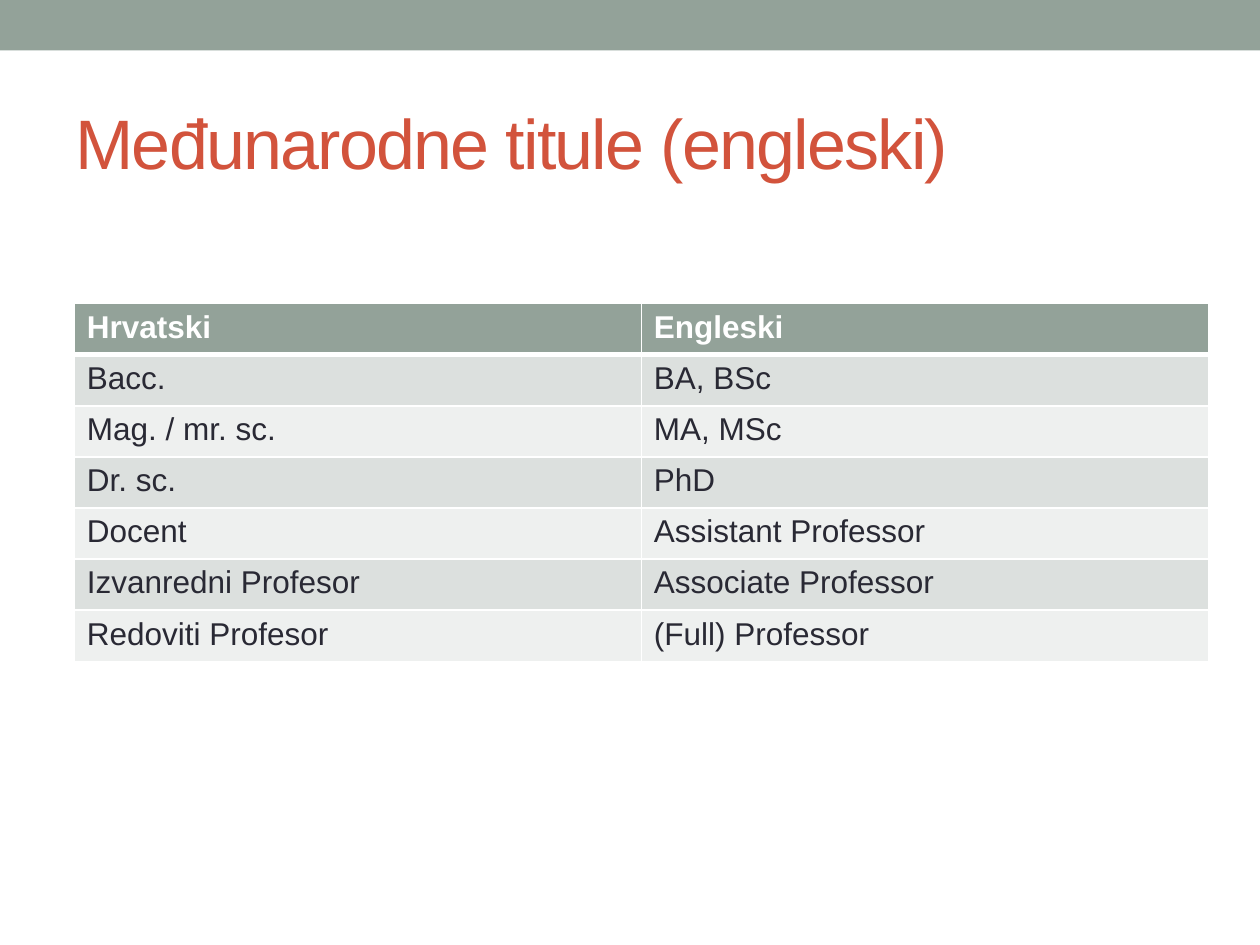
from lxml.etree import SubElement
from pptx import Presentation
from pptx.dml.color import RGBColor
from pptx.enum.shapes import MSO_SHAPE
from pptx.enum.text import MSO_ANCHOR
from pptx.oxml.ns import qn
from pptx.util import Inches, Pt

COLORS = {
    "sage": "93A299",
    "title": "D2533C",
    "text": "292934",
    "white": "FFFFFF",
    "dark_band": "DCE0DE",
    "light_band": "EEF0EF",
}
TITLE_FORMAT = {"name": "Arial", "size": Pt(40), "bold": False}
HEADER_FORMAT = {"name": "Arial", "size": Pt(18), "bold": True}
BODY_FORMAT = {"name": "Arial", "size": Pt(18), "bold": False}
TITLES = [
    ("Hrvatski", "Engleski"),
    ("Bacc.", "BA, BSc"),
    ("Mag. / mr. sc.", "MA, MSc"),
    ("Dr. sc.", "PhD"),
    ("Docent", "Assistant Professor"),
    ("Izvanredni Profesor", "Associate Professor"),
    ("Redoviti Profesor", "(Full) Professor"),
]


def paint(fill, color):
    fill.solid()
    fill.fore_color.rgb = RGBColor.from_string(COLORS[color])


def write(para, text, values, color):
    span = para.add_run()
    span.text = text
    for name, value in values.items():
        setattr(span.font, name, value)
    span.font.color.rgb = RGBColor.from_string(COLORS[color])
    return span


def add_band(page):
    band = page.shapes.add_shape(
        MSO_SHAPE.RECTANGLE, 0, 0, Inches(10), Inches(0.4))
    band.shadow.inherit = False
    paint(band.fill, "sage")
    band.line.fill.background()


def add_title(page, text):
    box = page.shapes.add_textbox(
        Inches(0.5), Inches(0.58), Inches(9), Inches(1.08))
    frame = box.text_frame
    frame.word_wrap = True
    frame.vertical_anchor = MSO_ANCHOR.MIDDLE
    span = write(frame.paragraphs[0], text, TITLE_FORMAT, "title")
    span.font._element.set("spc", "-100")


def add_borders(cell, widths):
    properties = cell._tc.get_or_add_tcPr()
    for side, width in widths.items():
        line = SubElement(properties, qn(f"a:ln{side}"), w=str(Pt(width)))
        fill = SubElement(line, qn("a:solidFill"))
        SubElement(fill, qn("a:srgbClr"), val=COLORS["white"])


def add_title_table(page, rows):
    table = page.shapes.add_table(
        len(rows), len(rows[0]),
        Inches(0.59), Inches(2.41), Inches(9), Inches(2.84)).table
    for row_index, row in enumerate(rows):
        if row_index == 0:
            fill, color, values = "sage", "white", HEADER_FORMAT
        else:
            fill = "dark_band" if row_index % 2 else "light_band"
            color, values = "text", BODY_FORMAT
        top = 3 if row_index == 1 else 1
        bottom = 3 if row_index == 0 else 1
        for column_index, text in enumerate(row):
            cell = table.cell(row_index, column_index)
            add_borders(cell, {"L": 1, "R": 1, "T": top, "B": bottom})
            paint(cell.fill, fill)
            write(cell.text_frame.paragraphs[0], text, values, color)


def main():
    deck = Presentation()
    deck.slide_width = Inches(10)
    deck.slide_height = Inches(7.5)
    page = deck.slides.add_slide(deck.slide_layouts[6])
    add_band(page)
    add_title(page, "Međunarodne titule (engleski)")
    add_title_table(page, TITLES)
    deck.save("out.pptx")


if __name__ == "__main__":
    main()
